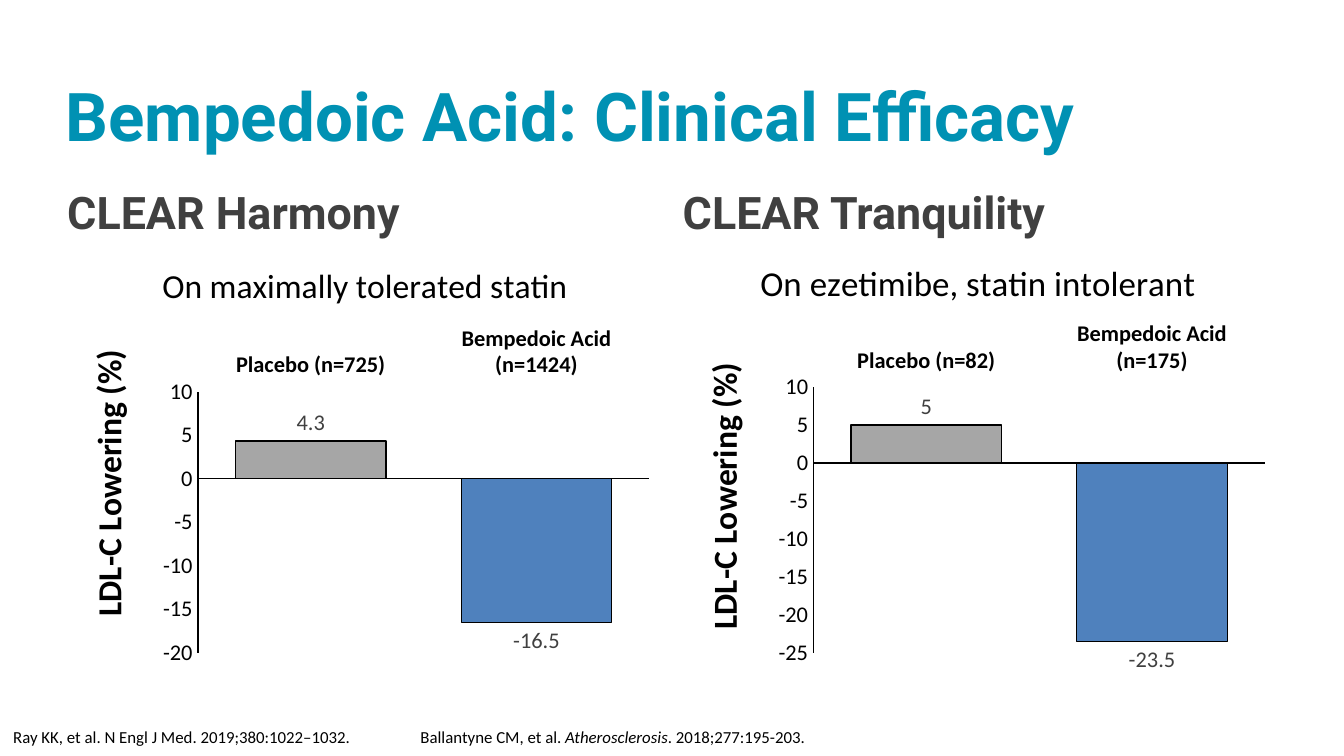
"""Build the bempedoic acid clinical efficacy slide with two trial charts."""
from dataclasses import dataclass

import lxml.etree
import pptx
import pptx.chart.chart
import pptx.chart.data
import pptx.dml.color
import pptx.enum.chart
import pptx.enum.text
import pptx.oxml.ns
import pptx.slide
import pptx.text.text
import pptx.util
from pptx.util import Inches


@dataclass(frozen=True)
class Theme:
    heading_font: str = "Roboto"
    body_font: str = "Calibri"
    title_color: str = "0091B3"
    heading_color: str = "404040"
    text_color: str = "000000"
    placebo_color: str = "A6A6A6"
    treatment_color: str = "4F81BD"
    title_size: int = 36
    heading_size: int = 24
    axis_title_size: int = 18
    harmony_title_size: float = 18
    tranquility_title_size: float = 18.7
    label_size: int = 12
    chart_size: int = 10
    footer_size: int = 9
    line_width: float = 0.75


@dataclass(frozen=True)
class Trial:
    name: str
    population: str
    title_size: float
    categories: tuple[str, str]
    changes: tuple[float, float]
    minimum: int
    left: float
    title_position: tuple[float, float]
    axis_title_position: tuple[float, float]
    plot_area: tuple[float, float, float, float]


THEME = Theme()
TRIALS = (
    Trial("CLEAR Tranquility", "On ezetimibe, statin intolerant",
          THEME.tranquility_title_size,
          ("Placebo (n=82)", "Bempedoic Acid (n=175)"), (5, -23.5), -25,
          5.08, (0.12, 0.03), (0.02, 0.27), (0.22, 0.34, 0.76, 0.61)),
    Trial("CLEAR Harmony", "On maximally tolerated statin",
          THEME.harmony_title_size,
          ("Placebo (n=725)", "Bempedoic Acid (n=1424)"), (4.3, -16.5), -20,
          0.5, (0.15, 0.04), (0.02, 0.24), (0.22, 0.35, 0.76, 0.6)),
)


def rgb(color: str) -> pptx.dml.color.RGBColor:
    return pptx.dml.color.RGBColor.from_string(color)


def style_font(font: pptx.text.text.Font, size: float, color: str,
               name: str = THEME.body_font, bold: bool = False) -> None:
    font.size, font.name, font.bold = pptx.util.Pt(size), name, bold
    font.color.rgb = rgb(color)


def style_line(line) -> None:
    line.color.rgb = rgb(THEME.text_color)
    line.width = pptx.util.Pt(THEME.line_width)


def add_heading(slide: pptx.slide.Slide, text: str, left: float, top: float,
                width: float, height: float, size: int, color: str,
                anchor: pptx.enum.text.MSO_ANCHOR) -> None:
    shape = slide.shapes.add_textbox(
        Inches(left), Inches(top), Inches(width), Inches(height))
    frame = shape.text_frame
    frame.word_wrap = True
    frame.vertical_anchor = anchor
    frame.margin_left = frame.margin_right = 0
    frame.margin_top = frame.margin_bottom = 0
    paragraph = frame.paragraphs[0]
    paragraph.text = text
    paragraph.line_spacing = 0.9
    style_font(paragraph.font, size, color, THEME.heading_font, True)


def make_layout(position: tuple[float, ...], inner: bool = False):
    """Return a manual chart layout from fractions of the chart area."""
    qualified = pptx.oxml.ns.qn
    layout = lxml.etree.Element(qualified("c:layout"))
    manual = lxml.etree.SubElement(layout, qualified("c:manualLayout"))
    settings = [("layoutTarget", "inner")] if inner else []
    settings += [("xMode", "edge"), ("yMode", "edge")]
    settings += zip("xywh", map(str, position))
    for tag, value in settings:
        lxml.etree.SubElement(manual, qualified(f"c:{tag}")).set("val", value)
    return layout


def set_title(title, text: str, position: tuple[float, float], size: float,
              bold: bool, rotation: int = 0) -> None:
    paragraph = title.text_frame.paragraphs[0]
    paragraph.text = text
    style_font(paragraph.font, size, THEME.text_color, bold=bold)
    element = title._element
    for layout in element.findall(pptx.oxml.ns.qn("c:layout")):
        element.remove(layout)
    text_element = element.find(pptx.oxml.ns.qn("c:tx"))
    text_element.addnext(make_layout(position))
    body = next(text_element.iter(pptx.oxml.ns.qn("a:bodyPr")))
    body.set("rot", str(rotation * 60000))


def style_axes(chart: pptx.chart.chart.Chart, trial: Trial) -> None:
    for axis, bold in ((chart.category_axis, True), (chart.value_axis, False)):
        axis.has_major_gridlines = False
        axis.major_tick_mark = pptx.enum.chart.XL_TICK_MARK.NONE
        axis.minor_tick_mark = pptx.enum.chart.XL_TICK_MARK.NONE
        style_font(axis.tick_labels.font, THEME.label_size, THEME.text_color, bold=bold)
        style_line(axis.format.line)
    chart.category_axis.tick_label_position = pptx.enum.chart.XL_TICK_LABEL_POSITION.HIGH
    value_axis = chart.value_axis
    value_axis.minimum_scale, value_axis.maximum_scale = trial.minimum, 10
    value_axis.major_unit = 5
    set_title(value_axis.axis_title, "LDL-C Lowering (%)",
              trial.axis_title_position, THEME.axis_title_size, True, -90)


def style_columns(chart: pptx.chart.chart.Chart) -> None:
    plot = chart.plots[0]
    plot.gap_width = 50
    plot.vary_by_categories = False
    series = plot.series[0]
    series.invert_if_negative = False
    for column, color in ((series, THEME.treatment_color),
                          (series.points[0], THEME.placebo_color)):
        column.format.fill.solid()
        column.format.fill.fore_color.rgb = rgb(color)
        style_line(column.format.line)
    labels = series.data_labels
    labels.show_value = True
    labels.position = pptx.enum.chart.XL_LABEL_POSITION.OUTSIDE_END
    style_font(labels.font, THEME.label_size, THEME.heading_color)


def add_chart(slide: pptx.slide.Slide, trial: Trial) -> None:
    data = pptx.chart.data.CategoryChartData()
    data.categories = trial.categories
    data.add_series("Series 1", trial.changes)
    chart = slide.shapes.add_chart(
        pptx.enum.chart.XL_CHART_TYPE.COLUMN_CLUSTERED, Inches(trial.left),
        Inches(1.78), Inches(4.42), Inches(3.24), data).chart
    style_font(chart.font, THEME.chart_size, THEME.text_color)
    chart.has_legend = False
    set_title(chart.chart_title, trial.population, trial.title_position,
              trial.title_size, False)
    style_axes(chart, trial)
    style_columns(chart)
    plot_area = next(chart._chartSpace.iter(pptx.oxml.ns.qn("c:plotArea")))
    for layout in plot_area.findall(pptx.oxml.ns.qn("c:layout")):
        plot_area.remove(layout)
    plot_area.insert(0, make_layout(trial.plot_area, inner=True))


def add_references(slide: pptx.slide.Slide) -> None:
    shape = slide.shapes.add_textbox(0, Inches(5.36), Inches(10), Inches(0.25))
    shape.text_frame.word_wrap = True
    paragraph = shape.text_frame.paragraphs[0]
    properties = paragraph._p.get_or_add_pPr()
    tabs = lxml.etree.SubElement(properties, pptx.oxml.ns.qn("a:tabLst"))
    tab = lxml.etree.SubElement(tabs, pptx.oxml.ns.qn("a:tab"))
    tab.set("pos", str(Inches(3.03)))
    tab.set("algn", "l")
    style_font(paragraph.font, THEME.footer_size, THEME.text_color)
    for text, italic in (
            ("Ray KK, et al. N Engl J Med. 2019;380:1022–1032.\tBallantyne CM, et al. ", False),
            ("Atherosclerosis", True), (". 2018;277:195-203.", False)):
        run = paragraph.add_run()
        run.text = text
        run.font.italic = italic


def main() -> None:
    presentation = pptx.Presentation()
    presentation.slide_width = Inches(10)
    presentation.slide_height = presentation.slide_width * 9 // 16
    slide = presentation.slides.add_slide(presentation.slide_layouts[6])
    add_heading(slide, "Bempedoic Acid: Clinical Efficacy", 0.49, 0.62, 9, 0.78,
                THEME.title_size, THEME.title_color, pptx.enum.text.MSO_ANCHOR.TOP)
    for trial in reversed(TRIALS):
        add_heading(slide, trial.name, trial.left, 1.26, 4.42, 0.52,
                    THEME.heading_size, THEME.heading_color,
                    pptx.enum.text.MSO_ANCHOR.BOTTOM)
    add_references(slide)
    for trial in TRIALS:
        add_chart(slide, trial)
    presentation.save("out.pptx")


if __name__ == "__main__":
    main()
